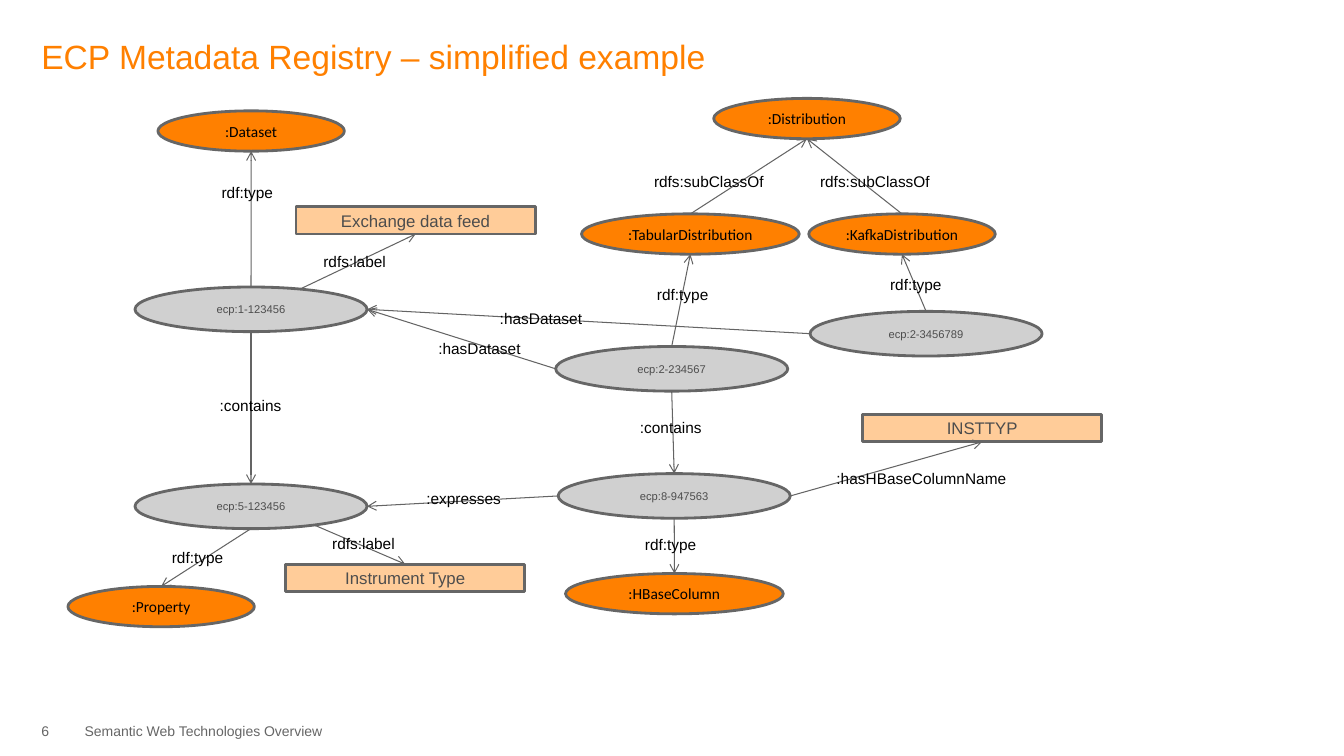
from math import cos, radians, sin

from lxml.etree import SubElement
from pptx import Presentation
from pptx.dml.color import RGBColor
from pptx.enum.shapes import MSO_CONNECTOR, MSO_SHAPE
from pptx.enum.text import MSO_ANCHOR, PP_ALIGN
from pptx.oxml.ns import qn
from pptx.util import Pt

ORANGE = RGBColor(0xFF, 0x80, 0x00)
PEACH = RGBColor(0xFF, 0xCC, 0x99)
SILVER = RGBColor(0xD0, 0xD0, 0xD0)
OUTLINE = RGBColor(0x66, 0x66, 0x66)
ARROW = RGBColor(0x64, 0x64, 0x64)
DARK = RGBColor(0x4D, 0x4D, 0x4D)
BLACK = RGBColor(0, 0, 0)

# Content: page texts as (text, left, top, width, height, size, colour, anchor)
PAGE_TEXTS = [
    ("6", 29.5, 516.2, 30, 24, 10, OUTLINE, MSO_ANCHOR.TOP),
    ("Semantic Web Technologies Overview", 60.5, 516.2, 419, 24, 10, OUTLINE, MSO_ANCHOR.TOP),
    ("ECP Metadata Registry – simplified example", 29.5, 23, 811, 34, 24, ORANGE,
     MSO_ANCHOR.MIDDLE),
]

# Node styles: shape, width, height, fill, font, size, text colour
STYLES = {
    "class": (MSO_SHAPE.OVAL, 133.2, 28.8, ORANGE, "Calibri", 11, BLACK),
    "wide class": (MSO_SHAPE.OVAL, 155.5, 28.8, ORANGE, "Calibri", 11, BLACK),
    "instance": (MSO_SHAPE.OVAL, 165.8, 31.9, SILVER, "Arial", 8, DARK),
    "literal": (MSO_SHAPE.RECTANGLE, 170.8, 19.6, PEACH, "Arial", 12, DARK),
}

# Nodes: text, style, left, top
NODES = [
    (":Dataset", "class", 112.8, 79.2),
    (":Distribution", "class", 509.8, 70.3),
    (":TabularDistribution", "wide class", 415.4, 152.8),
    (":KafkaDistribution", "class", 577.7, 152.8),
    (":Property", "class", 48.5, 418.9),
    (":HBaseColumn", "wide class", 404, 409.7),
    ("ecp:1-123456", "instance", 96.4, 205),
    ("ecp:2-234567", "instance", 396.9, 247.5),
    ("ecp:2-3456789", "instance", 578.6, 222.4),
    ("ecp:5-123456", "instance", 96.4, 345.7),
    ("ecp:8-947563", "instance", 398.7, 338.3),
    ("Exchange data feed", "literal", 211.5, 147.6),
    ("Instrument Type", "literal", 204.1, 403),
    ("INSTTYP", "literal", 616.2, 296),
]

# Compass angles of the points where arrows meet a node
RIGHT, TOP, LEFT, BOTTOM = 0, 90, 180, 270
UPPER_RIGHT, LOWER_RIGHT = 65, 303
SITES = {TOP: 0, LEFT: 1, BOTTOM: 2, RIGHT: 3}

# Relations: subject, angle, predicate, label left, label top, object, angle
RELATIONS = [
    ("ecp:1-123456", TOP, "rdf:type", 151.2, 126.9, ":Dataset", BOTTOM),
    ("ecp:1-123456", UPPER_RIGHT, "rdfs:label", 223.9, 176.4, "Exchange data feed", BOTTOM),
    (":TabularDistribution", TOP, "rdfs:subClassOf", 460.1, 119.7, ":Distribution", BOTTOM),
    (":KafkaDistribution", TOP, "rdfs:subClassOf", 578.7, 119.7, ":Distribution", BOTTOM),
    ("ecp:2-234567", TOP, "rdf:type", 462.2, 200, ":TabularDistribution", BOTTOM),
    ("ecp:2-3456789", TOP, "rdf:type", 628.7, 192.8, ":KafkaDistribution", BOTTOM),
    ("ecp:2-234567", LEFT, ":hasDataset", 306, 238.5, "ecp:1-123456", RIGHT),
    ("ecp:2-3456789", LEFT, ":hasDataset", 349.9, 217, "ecp:1-123456", RIGHT),
    ("ecp:1-123456", BOTTOM, ":contains", 149.8, 279.4, "ecp:5-123456", TOP),
    ("ecp:2-234567", BOTTOM, ":contains", 450, 295.2, "ecp:8-947563", TOP),
    ("ecp:8-947563", LEFT, ":expresses", 297.4, 345.6, "ecp:5-123456", RIGHT),
    ("ecp:8-947563", BOTTOM, "rdf:type", 453.6, 378.5, ":HBaseColumn", TOP),
    ("ecp:8-947563", RIGHT, ":hasHBaseColumnName", 590.4, 331.7, "INSTTYP", BOTTOM),
    ("ecp:5-123456", BOTTOM, "rdf:type", 115.7, 387.9, ":Property", TOP),
    ("ecp:5-123456", LOWER_RIGHT, "rdfs:label", 230.2, 377.9, "Instrument Type", TOP),
]
LABEL_WIDTHS = {"rdf:type": 56, "rdfs:label": 66, "rdfs:subClassOf": 98.6,
                ":hasHBaseColumnName": 154}
LABEL_WIDTH, LABEL_HEIGHT = 75, 20.6

presentation = Presentation()
presentation.slide_width, presentation.slide_height = Pt(960), Pt(540)
slide = presentation.slides.add_slide(presentation.slide_layouts[6])
shapes = slide.shapes


def write(frame, text, font_name, size, colour):
    paragraph = frame.paragraphs[0]
    paragraph.text = text
    paragraph.font.name = font_name
    paragraph.font.size = Pt(size)
    paragraph.font.color.rgb = colour
    return paragraph


def add_text(text, left, top, width, height, size, colour):
    frame = shapes.add_textbox(Pt(left), Pt(top), Pt(width), Pt(height)).text_frame
    frame.word_wrap = True
    write(frame, text, "Arial", size, colour)
    return frame


def add_node(text, style, left, top):
    outline, width, height, fill, font_name, size, colour = STYLES[style]
    node = shapes.add_shape(outline, Pt(left), Pt(top), Pt(width), Pt(height))
    node.shadow.inherit = False
    node.fill.solid()
    node.fill.fore_color.rgb = fill
    node.line.color.rgb = OUTLINE
    node.line.width = Pt(2)
    frame = node.text_frame
    frame.word_wrap = style == "literal"
    frame.vertical_anchor = MSO_ANCHOR.MIDDLE
    write(frame, text, font_name, size, colour).alignment = PP_ALIGN.CENTER
    return node


def edge_point(node, angle):
    turn = radians(angle)
    return (round(node.left + node.width / 2 * (1 + cos(turn))),
            round(node.top + node.height / 2 * (1 - sin(turn))))


def add_arrow(subject, start_angle, target, end_angle):
    arrow = shapes.add_connector(MSO_CONNECTOR.STRAIGHT, *edge_point(subject, start_angle),
                                 *edge_point(target, end_angle))
    # Ovals number their sites differently; only the top is shared with rectangles
    if start_angle == TOP:
        arrow.begin_connect(subject, SITES[TOP])
    if end_angle == TOP or target.auto_shape_type == MSO_SHAPE.RECTANGLE:
        arrow.end_connect(target, SITES[end_angle])
    arrow.line.color.rgb = ARROW
    arrow.line.width = Pt(0.75)
    SubElement(arrow.line._get_or_add_ln(), qn("a:tailEnd"), type="arrow")
    SubElement(arrow._element.spPr, qn("a:effectLst"))


# Title and footer
for *text_box, anchor in PAGE_TEXTS:
    frame = add_text(*text_box)
    frame.margin_left = frame.margin_top = frame.margin_right = frame.margin_bottom = 0
    frame.vertical_anchor = anchor

# Graph: nodes, then arrows with their labels
nodes = {node[0]: add_node(*node) for node in NODES}
for subject, start_angle, predicate, left, top, target, end_angle in RELATIONS:
    add_arrow(nodes[subject], start_angle, nodes[target], end_angle)
    add_text(predicate, left, top, LABEL_WIDTHS.get(predicate, LABEL_WIDTH), LABEL_HEIGHT,
             11, BLACK)

presentation.save("out.pptx")
